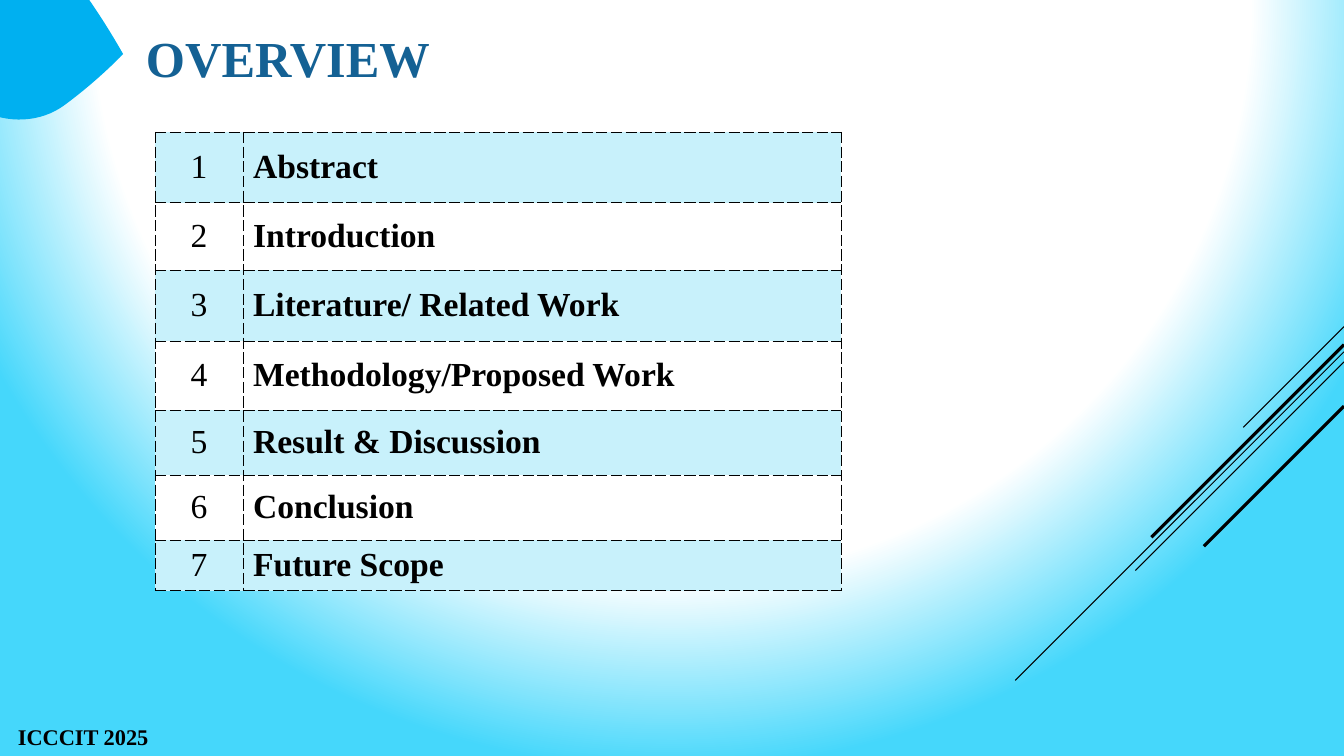
from dataclasses import dataclass

from pptx import Presentation
from pptx.dml.color import RGBColor
from pptx.enum.shapes import MSO_CONNECTOR, MSO_SHAPE
from pptx.enum.text import MSO_ANCHOR, MSO_AUTO_SIZE, PP_ALIGN
from pptx.oxml import parse_xml
from pptx.oxml.ns import nsdecls
from pptx.util import Inches, Pt

LEFT, CENTER = PP_ALIGN.LEFT, PP_ALIGN.CENTER
TOP, MIDDLE = MSO_ANCHOR.TOP, MSO_ANCHOR.MIDDLE
GROW = MSO_AUTO_SIZE.SHAPE_TO_FIT_TEXT
STRAIGHT = MSO_CONNECTOR.STRAIGHT
TEARDROP = MSO_SHAPE.TEAR


@dataclass(frozen=True)
class Theme:
    font: str = "Times New Roman"
    ink: str = "000000"
    title: str = "146194"
    accent: str = "00B0F0"
    band: str = "C8F1FB"
    paper: str = "FFFFFF"
    glow: str = "45D7FB"
    title_size: int = 36
    table_size: int = 24
    footer_size: int = 16
    border_width: float = 0.25


class SlideBuilder:
    def __init__(self, slide, theme):
        self.slide = slide
        self.theme = theme

    def background(self):
        """White centre at the top edge, fading to the glow colour."""
        theme = self.theme
        self.slide.element.cSld.insert(0, parse_xml(
            f'<p:bg {nsdecls("p", "a")}><p:bgPr><a:gradFill rotWithShape="1"><a:gsLst>'
            f'<a:gs pos="75000"><a:srgbClr val="{theme.paper}"/></a:gs>'
            f'<a:gs pos="100000"><a:srgbClr val="{theme.glow}"/></a:gs></a:gsLst>'
            '<a:path path="circle"><a:fillToRect l="0" t="0" r="0" b="100000"/></a:path>'
            '</a:gradFill><a:effectLst/></p:bgPr></p:bg>'))

    def line(self, start, end, width):
        points = [Inches(value) for value in (*start, *end)]
        connector = self.slide.shapes.add_connector(STRAIGHT, *points)
        connector.line.color.rgb = RGBColor.from_string(self.theme.ink)
        connector.line.width = Pt(width)
        connector.element.spPr.append(parse_xml(f'<a:effectLst {nsdecls("a")}/>'))

    def teardrop(self, box, rotation, point):
        shape = self.slide.shapes.add_shape(TEARDROP, *map(Inches, box))
        shape.adjustments[0] = point
        shape.rotation = rotation
        shape.shadow.inherit = False
        shape.fill.solid()
        shape.fill.fore_color.rgb = RGBColor.from_string(self.theme.accent)
        shape.line.fill.background()

    def add_text_run(self, frame, text, size, color, bold, align):
        paragraph = frame.paragraphs[0]
        paragraph.alignment = align
        run = paragraph.add_run()
        run.text = text
        run.font.name = self.theme.font
        run.font.size = Pt(size)
        run.font.bold = bold
        run.font.color.rgb = RGBColor.from_string(color)

    def text(self, box, text, size, color, align=LEFT, anchor=TOP, grow=False):
        frame = self.slide.shapes.add_textbox(*map(Inches, box)).text_frame
        frame.word_wrap = True
        frame.vertical_anchor = anchor
        if grow:
            frame.auto_size = GROW
        self.add_text_run(frame, text, size, color, True, align)

    def cell(self, cell, text, fill, bold, align):
        theme = self.theme
        properties = cell._tc.get_or_add_tcPr()
        for side in ("lnL", "lnR", "lnT", "lnB"):
            properties.append(parse_xml(
                f'<a:{side} {nsdecls("a")} w="{int(Pt(theme.border_width))}"><a:solidFill>'
                f'<a:srgbClr val="{theme.ink}"/></a:solidFill>'
                f'<a:prstDash val="sysDash"/></a:{side}>'))
        cell.fill.solid()
        cell.fill.fore_color.rgb = RGBColor.from_string(fill)
        cell.vertical_anchor = MIDDLE
        self.add_text_run(cell.text_frame, text, theme.table_size, theme.ink, bold, align)

    def numbered_table(self, left, top, widths, rows):
        size = (sum(widths), sum(height for _, height in rows))
        table = self.slide.shapes.add_table(
            len(rows), len(widths), *map(Inches, (left, top, *size))).table
        table.first_row = table.horz_banding = False
        for column, width in zip(table.columns, widths):
            column.width = Inches(width)
        for index, (topic, height) in enumerate(rows):
            table.rows[index].height = Inches(height)
            fill = self.theme.paper if index % 2 else self.theme.band
            self.cell(table.cell(index, 0), str(index + 1), fill, False, CENTER)
            self.cell(table.cell(index, 1), topic, fill, True, LEFT)


TOPICS = [
    ("Abstract", 0.7),
    ("Introduction", 0.67),
    ("Literature/ Related Work", 0.7),
    ("Methodology/Proposed Work", 0.69),
    ("Result & Discussion", 0.64),
    ("Conclusion", 0.65),
    ("Future Scope", 0.42),
]

# Diagonals from the right edge: start height, horizontal run, line width
DIAGONALS = [(3.24, 1, 0.75), (3.49, 3.26, 0.75), (3.59, 2.07, 0.75),
             (3.42, 1.91, 2.25), (4.03, 1.39, 2.25)]


def main():
    presentation = Presentation()
    presentation.slide_width = Inches(13.33)
    presentation.slide_height = Inches(7.5)
    theme = Theme()
    slide = presentation.slides.add_slide(presentation.slide_layouts[6])
    builder = SlideBuilder(slide, theme)

    # Backdrop and decoration
    builder.background()
    for height, run, width in DIAGONALS:
        builder.line((13.33, height), (13.33 - run, height + run), width)

    # Footer and corner drop
    builder.text((0, 7.13, 1.65, 0.37), "ICCCIT 2025", theme.footer_size,
                 theme.ink, align=CENTER, grow=True)
    builder.teardrop((-0.85, -0.53, 1.87, 1.64), 53.5, 0.935)

    # Title and agenda
    builder.text((1.35, 0.16, 11.26, 0.81), "OVERVIEW", theme.title_size,
                 theme.title, anchor=MIDDLE)
    builder.numbered_table(1.54, 1.31, (0.87, 5.93), TOPICS)

    presentation.save("out.pptx")


if __name__ == "__main__":
    main()
